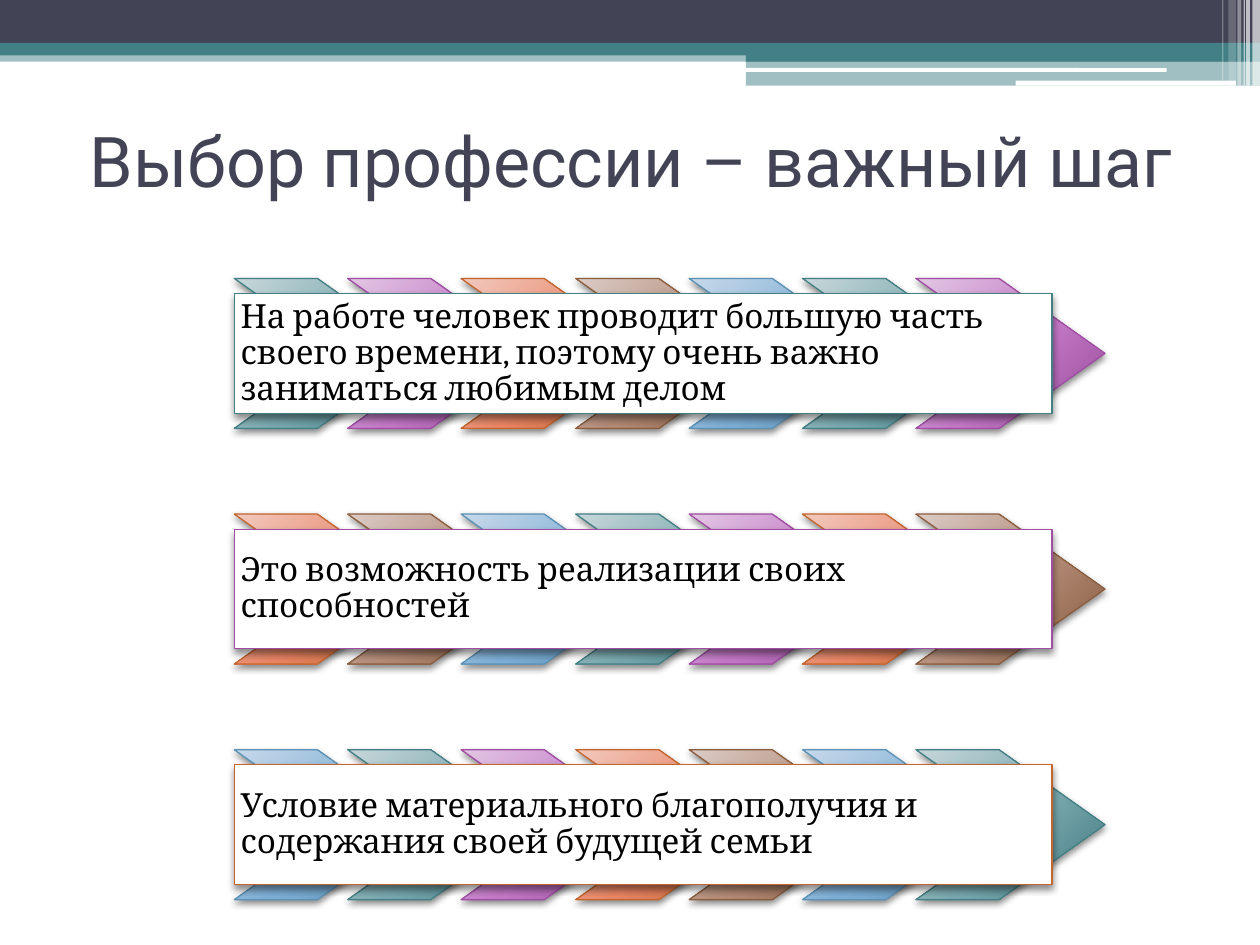
import dataclasses
import typing

import pptx
import pptx.dml.color
import pptx.enum.shapes
import pptx.enum.text
import pptx.oxml
import pptx.oxml.ns
import pptx.util

PX = 9144
KIND = pptx.enum.shapes.MSO_SHAPE
MID = pptx.enum.text.MSO_ANCHOR.MIDDLE
HEX = {"ink": "424456", "teal": "438086", "white": "FFFFFF", "black": "000000"}


@dataclasses.dataclass
class Box:
    x: int
    y: int
    w: int
    h: int


@dataclasses.dataclass
class Bar:
    box: Box
    tint: str
    alpha: int = 100
    kind: typing.Any = KIND.RECTANGLE


@dataclasses.dataclass
class Hue:
    line: str
    stops: tuple[str, str, str]


HUES = [
    Hue("438086", ("C7D7DA", "77A7AD", "3E777D")),
    Hue("A04DA3", ("E2C6E3", "C277C5", "954898")),
    Hue("C4652D", ("F2C9BF", "E78463", "B75E2A")),
    Hue("8B5D3D", ("DBCCC6", "B18874", "825739")),
    Hue("5C92B5", ("C7D9EA", "7CADD4", "5688A9")),
]
BARS = [
    Bar(Box(0, 40, 1000, 9), "teal", 50),
    Bar(Box(0, 0, 1000, 34), "ink"),
    Bar(Box(0, 34, 1000, 10), "teal"),
    Bar(Box(592, 39, 408, 10), "teal"),
    Bar(Box(592, 48, 408, 20), "teal", 50),
    Bar(Box(591, 54, 335, 3), "white", kind=KIND.ROUNDED_RECTANGLE),
    Bar(Box(806, 64, 175, 4), "white", kind=KIND.ROUNDED_RECTANGLE),
    Bar(Box(994, 0, 6, 68), "white", 65),
    Bar(Box(989, 0, 3, 68), "white", 65),
    Bar(Box(987, 0, 1, 68), "white", 60),
    Bar(Box(982, 0, 3, 68), "white", 40),
    Bar(Box(975, 0, 6, 64), "white", 20),
    Bar(Box(970, 0, 1, 64), "white", 30),
]
ROWS = [
    "На работе человек проводит большую часть своего времени, "
    "поэтому очень важно заниматься любимым делом",
    "Это возможность реализации своих способностей",
    "Условие материального благополучия и содержания своей будущей семьи",
]
COUNT = 7
LEFT, TOP, STEP = 186, 221, 187


def rgb(code: str) -> pptx.dml.color.RGBColor:
    return pptx.dml.color.RGBColor.from_string(code)


def xml(text: str) -> typing.Any:
    head, tail = text.split(" ", 1)
    return pptx.oxml.parse_xml(f"{head} {pptx.oxml.ns.nsdecls('a')} {tail}")


def format_all(item: typing.Any, vals: dict[str, typing.Any]) -> None:
    for name, val in vals.items():
        setattr(item, name, val)


def place(box: Box) -> dict[str, int]:
    return {"left": box.x * PX, "top": box.y * PX,
            "width": box.w * PX, "height": box.h * PX}


def add_shape(slide: typing.Any, kind: typing.Any, box: Box) -> typing.Any:
    shape = slide.shapes.add_shape(kind, *place(box).values())
    shape.shadow.inherit = False
    return shape


def draw_bar(slide: typing.Any, bar: Bar) -> None:
    shape = add_shape(slide, bar.kind, bar.box)
    shape.fill.solid()
    shape.fill.fore_color.rgb = rgb(HEX[bar.tint])
    shape.line.fill.background()
    if bar.alpha < 100:
        tint = shape._element.spPr.find(".//" + pptx.oxml.ns.qn("a:srgbClr"))
        tint.append(xml(f'<a:alpha val="{bar.alpha * 1000}"/>'))


def add_edge(shape: typing.Any, code: str) -> None:
    shape.line.color.rgb = rgb(code)
    shape.line.width = pptx.util.Pt(0.75)
    effects = shape._element.spPr.find(pptx.oxml.ns.qn("a:effectLst"))
    effects.append(xml(
        '<a:outerShdw blurRad="50800" dist="25400" dir="5400000" rotWithShape="0">'
        f'<a:srgbClr val="{HEX["black"]}"><a:alpha val="45000"/></a:srgbClr>'
        '</a:outerShdw>'))


def draw_arrow(slide: typing.Any, box: Box, hue: Hue) -> None:
    shape = add_shape(slide, KIND.CHEVRON, box)
    shape.adjustments[0] = 0.706
    shape.fill.background()
    stops = "".join(
        f'<a:gs pos="{pos}"><a:srgbClr val="{code}"/></a:gs>'
        for pos, code in zip((0, 55000, 100000), hue.stops))
    props = shape._element.spPr
    props.replace(props.find(pptx.oxml.ns.qn("a:noFill")), xml(
        f'<a:gradFill rotWithShape="1"><a:gsLst>{stops}</a:gsLst>'
        '<a:path path="circle"><a:fillToRect l="-40000" t="-90000" '
        'r="140000" b="190000"/></a:path></a:gradFill>'))
    add_edge(shape, hue.line)


def draw_card(slide: typing.Any, box: Box, hue: Hue, text: str) -> None:
    shape = add_shape(slide, KIND.RECTANGLE, box)
    shape.fill.solid()
    shape.fill.fore_color.rgb = rgb(HEX["white"])
    add_edge(shape, hue.line)
    frame = shape.text_frame
    sides = ("left", "top", "right", "bottom")
    format_all(frame, {f"margin_{side}": 5 * PX for side in sides})
    format_all(frame, {"word_wrap": True, "vertical_anchor": MID, "text": text})
    para = frame.paragraphs[0]
    format_all(para, {"alignment": pptx.enum.text.PP_ALIGN.LEFT, "line_spacing": 0.9})
    format_all(para.font, {"name": "Cambria", "size": pptx.util.Pt(19)})
    para.font.color.rgb = rgb(HEX["black"])


def draw_title(slide: typing.Any, text: str) -> None:
    title = slide.shapes.title
    format_all(title, place(Box(51, 68, 900, 117)))
    format_all(title.text_frame, {
        "text": text, "word_wrap": True, "vertical_anchor": MID,
        "auto_size": pptx.enum.text.MSO_AUTO_SIZE.NONE})
    para = title.text_frame.paragraphs[0]
    para.alignment = pptx.enum.text.PP_ALIGN.CENTER
    font = para.runs[0].font
    format_all(font, {"name": "Roboto", "size": pptx.util.Pt(40)})
    font.color.rgb = rgb(HEX["ink"])


def main() -> None:
    deck = pptx.Presentation()
    format_all(deck, {"slide_width": 1000 * PX, "slide_height": 750 * PX})
    slide = deck.slides.add_slide(deck.slide_layouts[5])
    for bar in BARS:
        draw_bar(slide, bar)
    draw_title(slide, "Выбор профессии – важный шаг")
    for row, text in enumerate(ROWS):
        top = TOP + row * STEP
        for col in range(COUNT):
            hue = HUES[(row * COUNT + col) % len(HUES)]
            draw_arrow(slide, Box(round(LEFT + 90.2 * col), top, 150, 119), hue)
        draw_card(slide, Box(LEFT, top + 12, 649, 95), HUES[row], text)
    deck.save("out.pptx")


if __name__ == "__main__":
    main()
